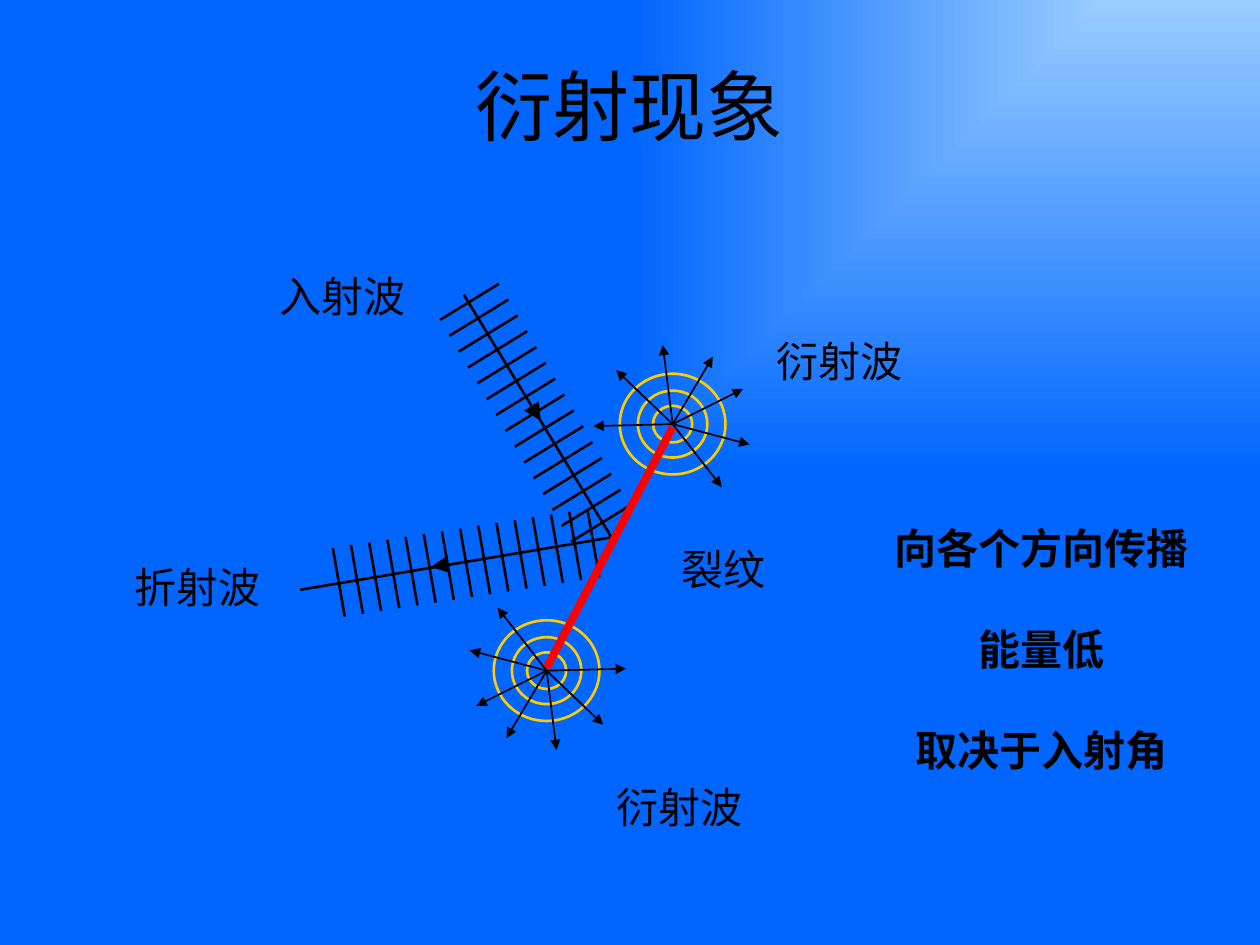
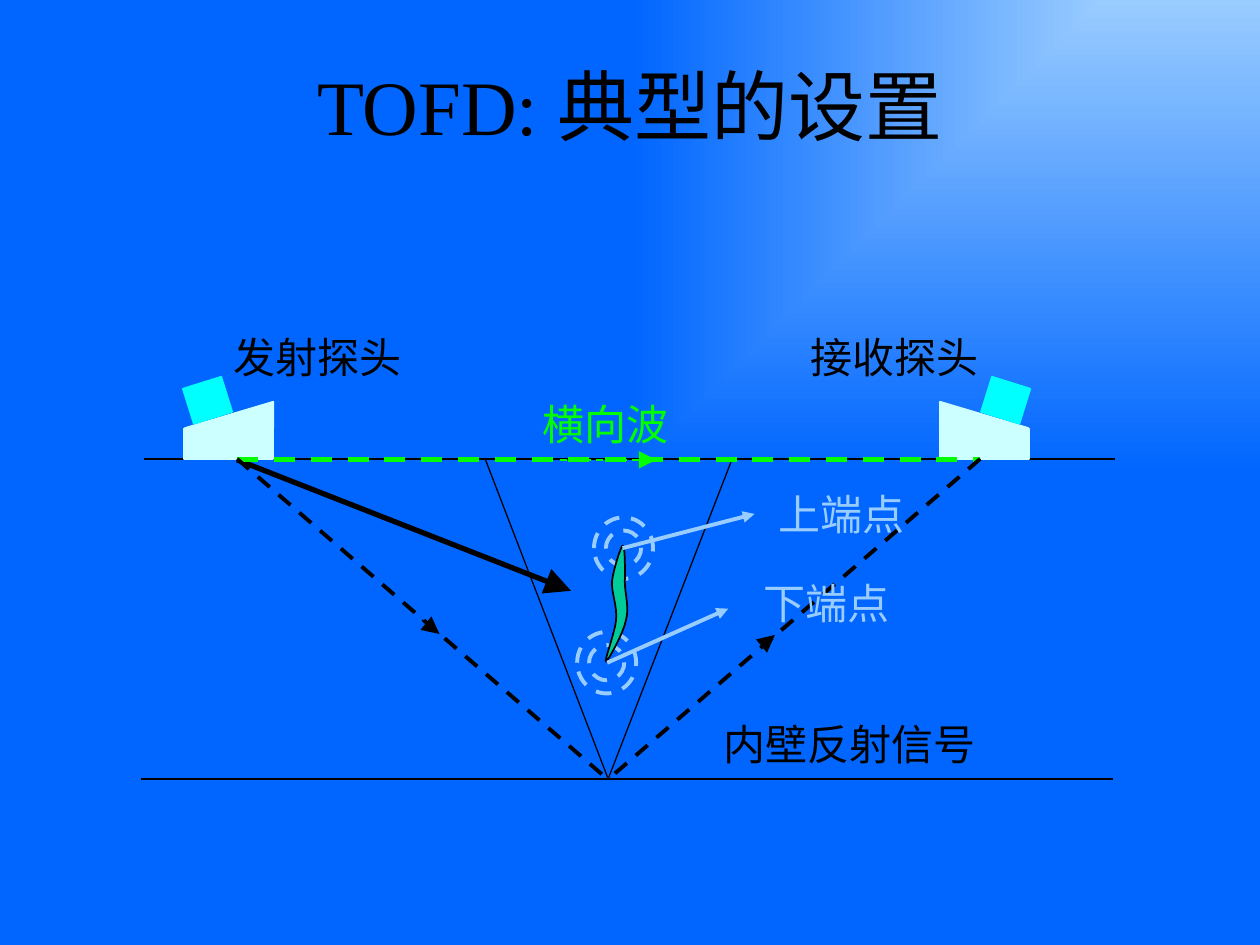
"""Build two slides on ultrasonic diffraction and the typical TOFD setup."""
import lxml.etree
import pptx
import pptx.dml.color
import pptx.enum.dml
import pptx.enum.shapes
import pptx.enum.text
import pptx.oxml.ns
import pptx.util

Cm = pptx.util.Cm
qn = pptx.oxml.ns.qn
PRESET = pptx.enum.shapes.MSO_SHAPE
STRAIGHT = pptx.enum.shapes.MSO_CONNECTOR.STRAIGHT
COLORS = {
    "glow": "99CCFF", "sky": "0066FF", "ink": "000000", "ring": "FFCC00",
    "crack": "FF0000", "wedge": "CCFFFF", "crystal": "00FFFF",
    "lateral": "00FF00", "flaw": "00CC99",
}


def style(part, color, width, fill=None, dash=False, head=None):
    if fill:
        part.fill.solid()
        part.fill.fore_color.rgb = pptx.dml.color.RGBColor.from_string(COLORS[fill])
    elif hasattr(part, "fill"):
        part.fill.background()
    part.line.color.rgb = pptx.dml.color.RGBColor.from_string(COLORS[color])
    part.line.width = pptx.util.Pt(width)
    if dash:
        part.line.dash_style = pptx.enum.dml.MSO_LINE.DASH
    properties = part.element.spPr
    if head:
        lxml.etree.SubElement(properties.find(qn("a:ln")), qn("a:tailEnd"),
                              type="triangle", w=head, len=head)
    lxml.etree.SubElement(properties, qn("a:effectLst"))


def write(slide, lines, left, top, width, height=1.27, size=24, color="ink",
          bold=False, wrap=False, gap=0):
    frame = slide.shapes.add_textbox(Cm(left), Cm(top), Cm(width), Cm(height)).text_frame
    frame_format = {
        "word_wrap": wrap,
        "auto_size": pptx.enum.text.MSO_AUTO_SIZE.NONE,
        "vertical_anchor": pptx.enum.text.MSO_ANCHOR.MIDDLE,
        "text": "\n".join(lines),
    }
    for name, value in frame_format.items():
        setattr(frame, name, value)
    font_format = {"name": "Times New Roman", "size": pptx.util.Pt(size), "bold": bold}
    for index, paragraph in enumerate(frame.paragraphs):
        paragraph.alignment = pptx.enum.text.PP_ALIGN.CENTER
        paragraph.space_before = pptx.util.Pt(gap if index else 0)
        font = paragraph.runs[0].font
        for name, value in font_format.items():
            setattr(font, name, value)
        font.color.rgb = pptx.dml.color.RGBColor.from_string(COLORS[color])


deck = pptx.Presentation()
deck.slide_width, deck.slide_height = Cm(25.4), Cm(19.05)

backdrop = deck.slide_master.background.fill
backdrop.gradient()
for stop, color in zip(backdrop.gradient_stops, ("glow", "sky")):
    stop.color.rgb = pptx.dml.color.RGBColor.from_string(COLORS[color])
gradient = deck.slide_master.element.find(".//" + qn("p:bg")).find(".//" + qn("a:gradFill"))
gradient.remove(gradient.find(qn("a:lin")))
spread = lxml.etree.SubElement(gradient, qn("a:path"), path="rect")
lxml.etree.SubElement(spread, qn("a:fillToRect"), l="100000", t="0", r="0", b="100000")

slides = []
for title in ("衍射现象", "TOFD: 典型的设置"):
    slide = deck.slides.add_slide(deck.slide_layouts[6])
    write(slide, [title], 0, 0.43, 25.4, 3.38, size=44, wrap=True)
    slides.append(slide)
diffraction, setup = slides

wave_lines = [
    (6.05, 11.89, 12.4, 10.82, 1.5, None),
    (12.32, 10.82, 9.35, 5.94, 1.5, None),
    (10.31, 7.54, 10.9, 8.48, 0.75, "lg"),
    (9.96, 11.23, 8.69, 11.43, 0.75, "lg"),
]
front_count = 15
wave_fronts = [
    ((6.71, 11.05), (11.84, 10.26), (0.24, 1.38)),
    ((10.06, 5.72), (12.7, 10.19), (-1.19, 0.73)),
]
for (x1, y1), (x2, y2), (across, down) in wave_fronts:
    for front in range(front_count):
        share = front / (front_count - 1)
        x, y = x1 + (x2 - x1) * share, y1 + (y2 - y1) * share
        wave_lines.append((x, y, x + across, y + down, 1.5, None))

ring_sizes = [(0.79, 0.74), (1.4, 1.35), (2.13, 2.03)]
ray_tips = [(-1.14, -1.09), (-0.2, -1.6), (1.55, 0.41), (1.42, -0.71),
            (0.81, -1.36), (0.99, 1.27), (-1.6, 0.04)]
for x, y, turn in ((13.56, 8.55, 1), (11.02, 13.52, -1)):
    for width, height in ring_sizes:
        ring = diffraction.shapes.add_shape(
            PRESET.OVAL, Cm(x - width / 2), Cm(y - height / 2), Cm(width), Cm(height))
        style(ring, "ring", 1.5)
    for across, down in ray_tips:
        wave_lines.append((x, y, x + turn * across, y + turn * down, 1, "med"))

for x1, y1, x2, y2, width, head in wave_lines:
    wave = diffraction.shapes.add_connector(STRAIGHT, Cm(x1), Cm(y1), Cm(x2), Cm(y2))
    style(wave, "ink", width, head=head)
crack = diffraction.shapes.add_connector(STRAIGHT, Cm(13.56), Cm(8.61), Cm(11.02), Cm(13.46))
style(crack, "crack", 4.5)

for name, left, top, width in (
    ("裂纹", 13.49, 10.82, 2.21),
    ("衍射波", 15.39, 6.63, 3.05),
    ("衍射波", 12.17, 15.62, 3.05),
    ("入射波", 5.38, 5.33, 3.05),
    ("折射波", 2.46, 11.2, 3.05),
):
    write(diffraction, [name], left, top, width)
write(diffraction, ["向各个方向传播", "能量低", "取决于入射角"],
      17.42, 10.41, 7.16, 5.33, bold=True, wrap=True, gap=28.8)

for x1, y1, x2, y2, width in (
    (2.9, 9.25, 22.48, 9.25, 1.5),
    (2.84, 15.7, 22.43, 15.7, 1.5),
    (12.26, 15.7, 9.78, 9.25, 0.75),
    (12.26, 15.7, 14.76, 9.25, 0.75),
):
    wall = setup.shapes.add_connector(STRAIGHT, Cm(x1), Cm(y1), Cm(x2), Cm(y2))
    style(wall, "ink", width)

mirror_sum = 24.46
probe_parts = [
    (PRESET.RECTANGLE, 3.71, 8.64, 1.8, 0.61, "wedge", 0),
    (PRESET.RIGHT_TRIANGLE, 3.73, 8.1, 1.78, 0.53, "wedge", 0),
    (PRESET.RECTANGLE, 3.78, 7.7, 0.81, 0.74, "crystal", -17.4),
]
for receiving in (False, True):
    for kind, left, top, width, height, color, tilt in probe_parts:
        x = mirror_sum - left - width if receiving else left
        probe = setup.shapes.add_shape(kind, Cm(x), Cm(top), Cm(width), Cm(height))
        probe.rotation = -tilt if receiving else tilt
        if not receiving and kind == PRESET.RIGHT_TRIANGLE:
            probe.element.spPr.find(qn("a:xfrm")).set("flipH", "1")
        style(probe, color, 1, fill=color)

for x, y in ((12.57, 11.05), (12.23, 13.36)):
    for width, height in ((0.71, 0.71), (1.19, 1.24)):
        ripple = setup.shapes.add_shape(
            PRESET.OVAL, Cm(x - width / 2), Cm(y - height / 2), Cm(width), Cm(height))
        style(ripple, "glow", 2.25, dash=True)

flaw_start = (12.55, 11)
flaw_curves = [
    ((12.52, 11.02), (12.37, 11.46), (12.34, 11.71)),
    ((12.32, 11.96), (12.45, 12.22), (12.42, 12.5)),
    ((12.4, 12.75), (12.17, 13.34), (12.22, 13.34)),
    ((12.24, 13.34), (12.57, 12.78), (12.62, 12.5)),
    ((12.7, 12.22), (12.57, 11.89), (12.6, 11.63)),
    ((12.6, 11.38), (12.6, 11), flaw_start),
]
flaw_points, corner, steps = [], flaw_start, 8
for bend_out, bend_in, end in flaw_curves:
    for step in range(1, steps + 1):
        t = step / steps
        flaw_points.append([
            Cm((1 - t) ** 3 * a + 3 * (1 - t) ** 2 * t * b + 3 * (1 - t) * t ** 2 * c + t ** 3 * d)
            for a, b, c, d in zip(corner, bend_out, bend_in, end)])
    corner = end
outline = setup.shapes.build_freeform(Cm(flaw_start[0]), Cm(flaw_start[1]))
outline.add_line_segments(flaw_points, close=True)
style(outline.convert_to_shape(), "ink", 1, fill="flaw")

for x1, y1, x2, y2, color, width, dash, head in (
    (4.78, 9.27, 11.51, 11.91, "ink", 3, False, "lg"),
    (4.78, 9.27, 19.76, 9.27, "lateral", 3, True, None),
    (11.28, 9.27, 13.23, 9.27, "lateral", 1, True, "lg"),
    (12.55, 11.05, 15.21, 10.36, "glow", 2.25, False, "med"),
    (12.24, 13.36, 14.68, 12.27, "glow", 2.25, False, "med"),
    (8.51, 12.5, 8.86, 12.78, "ink", 1, False, "lg"),
    (15.44, 12.95, 15.62, 12.8, "ink", 1, False, "lg"),
    (4.78, 9.25, 12.24, 15.7, "ink", 2.25, True, None),
    (19.76, 9.25, 12.27, 15.7, "ink", 2.25, True, None),
):
    ray = setup.shapes.add_connector(STRAIGHT, Cm(x1), Cm(y1), Cm(x2), Cm(y2))
    style(ray, color, width, dash=dash, head=head)

for name, left, top, width, color in (
    ("发射探头", 4.45, 6.55, 3.89, "ink"),
    ("接收探头", 16.08, 6.55, 3.89, "ink"),
    ("横向波", 10.69, 7.9, 3.05, "lateral"),
    ("上端点", 15.44, 9.73, 3.05, "glow"),
    ("下端点", 15.14, 11.51, 3.05, "glow"),
    ("内壁反射信号", 14.33, 14.35, 5.59, "ink"),
):
    write(setup, [name], left, top, width, color=color)

deck.save("out.pptx")
